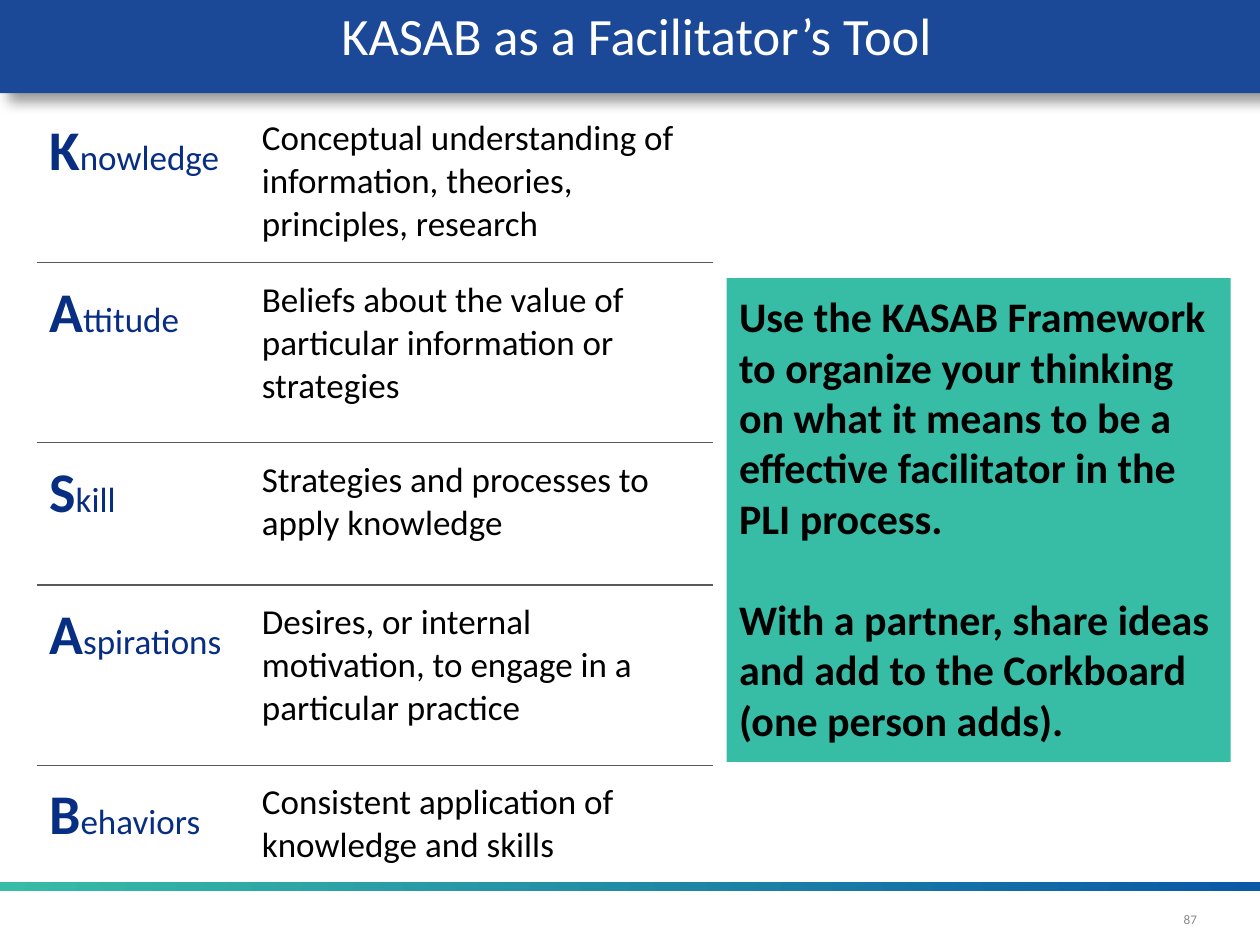
from lxml import etree
from pptx import Presentation
from pptx import util as u
from pptx.dml.color import RGBColor
from pptx.enum import shapes, text
from pptx.oxml import parse_xml
from pptx.oxml.ns import nsdecls, qn

BANNER_BLUE = RGBColor(0x1B, 0x49, 0x97)
LETTER_BLUE = RGBColor(0x07, 0x2E, 0x82)
STRIPE_BLUE = RGBColor(0x09, 0x59, 0xA7)
TEAL = RGBColor(0x37, 0xBC, 0xA5)
RULE_GREY = RGBColor(0x59, 0x59, 0x59)
NUMBER_GREY = RGBColor(0x89, 0x89, 0x89)
BLACK = RGBColor(0, 0, 0)
WHITE = RGBColor(0xFF, 0xFF, 0xFF)

KASAB = [
    ("Knowledge", "Conceptual understanding of information, theories, principles, research"),
    ("Attitude", "Beliefs about the value of particular information or strategies"),
    ("Skill", "Strategies and processes to apply knowledge"),
    ("Aspirations", "Desires, or internal motivation, to engage in a particular practice"),
    ("Behaviors", "Consistent application of knowledge and skills"),
]
ROW_HEIGHTS = [3.23, 3.63, 2.87, 3.63, 2.87]
TASK = [
    "Use the KASAB Framework to organize your thinking on what it means "
    "to be a effective facilitator in the PLI process.",
    "With a partner, share ideas and add to the Corkboard (one person adds).",
]


class SlideBuilder:
    """Holds the style and the current slide; lengths are in centimetres."""

    font_name = "Calibri"

    def __init__(self, slide):
        self.slide = slide

    def style(self, run, size, color, bold=False):
        run.font.name = self.font_name
        run.font.size = u.Pt(size)
        run.font.bold = bold
        run.font.color.rgb = color

    def block(self, left, top, width, height, color=None):
        shape = self.slide.shapes.add_shape(
            shapes.MSO_SHAPE.RECTANGLE, *map(u.Cm, (left, top, width, height)))
        shape.shadow.inherit = False
        shape.line.fill.background()
        if color is not None:
            shape.fill.solid()
            shape.fill.fore_color.rgb = color
        return shape

    def stripe(self, left, top, width, height, colors):
        fill = self.block(left, top, width, height).fill
        fill.gradient()
        fill.gradient_angle = 0
        for stop, position, color in zip(fill.gradient_stops, (0, 1), colors):
            stop.position = position
            stop.color.rgb = color

    def banner(self, left, top, width, height, color):
        shape = self.block(left, top, width, height, color)
        effects = shape._element.spPr.find(qn("a:effectLst"))
        effects.append(parse_xml(
            f'<a:outerShdw {nsdecls("a")} blurRad="{u.Pt(7)}" dist="{u.Pt(7)}" '
            'dir="2700000" algn="tl" rotWithShape="0">'
            '<a:srgbClr val="000000"><a:alpha val="40000"/></a:srgbClr></a:outerShdw>'))

    def set_text(self, shape, paragraphs, size, color, align, bold=False,
                 anchor=text.MSO_ANCHOR.TOP, inset=0.0, spacing=None, gap=0):
        frame = shape.text_frame
        frame.word_wrap = True
        frame.vertical_anchor = anchor
        frame.margin_left = frame.margin_right = u.Cm(inset)
        frame.margin_top = frame.margin_bottom = u.Cm(inset)
        frame.text = "\n".join(paragraphs)
        for index, paragraph in enumerate(frame.paragraphs):
            paragraph.alignment = align
            if spacing:
                paragraph.line_spacing = spacing
            if index:
                paragraph.space_before = u.Pt(gap)
            for run in paragraph.runs:
                self.style(run, size, color, bold)

    def label(self, left, top, width, height, wording, *args, **options):
        box = self.slide.shapes.add_textbox(*map(u.Cm, (left, top, width, height)))
        self.set_text(box, [wording], *args, **options)

    def borders(self, cell, rule_sides):
        properties = cell._tc.get_or_add_tcPr()
        for index, side in enumerate(("lnL", "lnR", "lnT", "lnB")):
            line = etree.Element(qn(f"a:{side}"))
            if side in rule_sides:
                line.set("w", str(u.Pt(0.75)))
                fill = etree.SubElement(line, qn("a:solidFill"))
                etree.SubElement(fill, qn("a:srgbClr"), val=str(RULE_GREY))
            else:
                etree.SubElement(line, qn("a:noFill"))
            properties.insert(index, line)

    def framework_table(self, left, top, widths, heights, entries):
        table = self.slide.shapes.add_table(
            len(entries), len(widths), u.Cm(left), u.Cm(top),
            u.Cm(sum(widths)), u.Cm(sum(heights))).table
        table.first_row = table.horz_banding = False
        for column, width in zip(table.columns, widths):
            column.width = u.Cm(width)
        last = len(entries) - 1
        for index, (entry, height) in enumerate(zip(entries, heights)):
            row = table.rows[index]
            row.height = u.Cm(height)
            sides = [s for s, shown in (("lnT", index > 0), ("lnB", index < last)) if shown]
            for cell in row.cells:
                cell.fill.background()
                cell.margin_left = cell.margin_right = u.Cm(0.25)
                cell.margin_top = cell.margin_bottom = u.Cm(0.33)
                self.borders(cell, sides)
            term, meaning = (cell.text_frame.paragraphs[0] for cell in row.cells)
            for part, size, bold in ((entry[0][0], 32, True), (entry[0][1:], 20, False)):
                run = term.add_run()
                run.text = part
                self.style(run, size, LETTER_BLUE, bold)
            meaning.text = entry[1]
            self.style(meaning.runs[0], 20, BLACK)


def main():
    prs = Presentation()
    prs.slide_width, prs.slide_height = u.Cm(25.4), u.Cm(19.05)
    builder = SlideBuilder(prs.slides.add_slide(prs.slide_layouts[6]))
    align = text.PP_ALIGN

    # Footer stripe
    builder.stripe(0, 17.78, 25.4, 0.18, (TEAL, STRIPE_BLUE))

    # KASAB framework
    builder.framework_table(0.74, 2.04, (4.29, 9.35), ROW_HEIGHTS, KASAB)

    # Title banner
    builder.banner(0, 0, 25.5, 1.88, BANNER_BLUE)
    builder.label(0.66, 0.2, 24.59, 1.85, "KASAB as a Facilitator’s Tool ",
                  30, WHITE, align.CENTER, spacing=0.9)

    # Slide number
    builder.label(23.72, 18.31, 0.41, 0.43, "87", 7.5, NUMBER_GREY, align.RIGHT,
                  anchor=text.MSO_ANCHOR.MIDDLE)

    # Task for partners
    task_box = builder.block(14.65, 5.61, 10.16, 9.75, TEAL)
    builder.set_text(task_box, TASK, 24, BLACK, align.LEFT, bold=True, inset=0.25, gap=29)

    prs.save("out.pptx")


if __name__ == "__main__":
    main()
